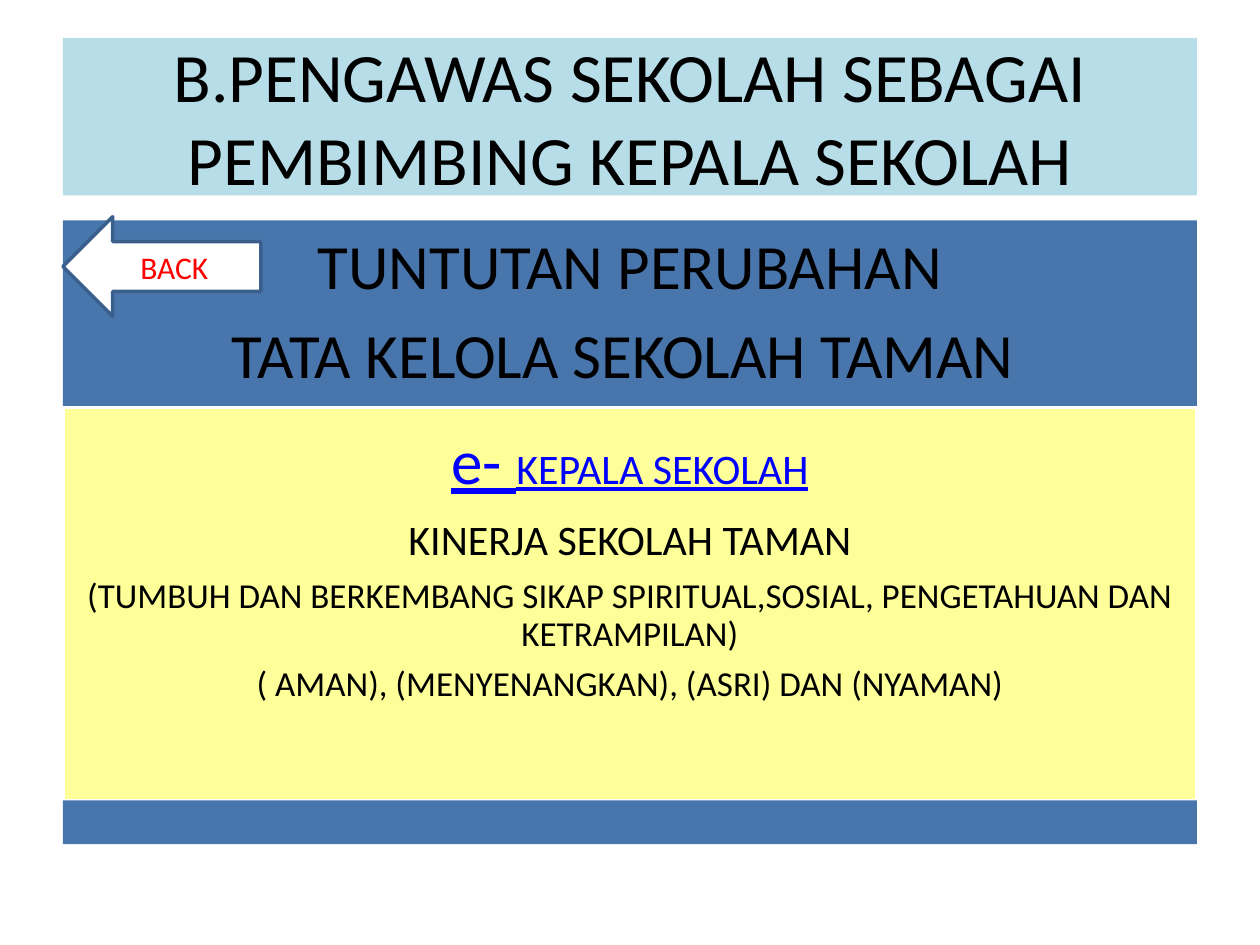
from pptx import Presentation
from pptx.dml.color import RGBColor as Rgb
from pptx.enum.shapes import MSO_SHAPE as Kind
from pptx.enum.text import MSO_ANCHOR as Anchor, PP_ALIGN as Align
from pptx.util import Inches, Pt

HUE = {"sky": "B7DEE8", "blue": "4875AC", "cream": "FFFF99", "white": "FFFFFF",
       "edge": "3A5F8C", "black": "000000", "link": "0000FF", "red": "FF0000"}
COL, ROW = Inches(0.5), Inches(0.05)


def put(item, form):
    """Set each attribute of item from the form dict."""
    for key, val in form.items():
        setattr(item, key, val)


def block(slide, box, fill, line=None, kind=Kind.RECTANGLE):
    """Add a filled shape at box, given in inches."""
    shape = slide.shapes.add_shape(kind, *map(Inches, box))
    shape.shadow.inherit = False
    shape.fill.solid()
    shape.fill.fore_color.rgb = Rgb.from_string(HUE[fill])
    if line:
        shape.line.color.rgb = Rgb.from_string(HUE[line])
        shape.line.width = Pt(2)
    else:
        shape.line.fill.background()
    return shape


def write(shape, paras, inset=None, lead=None, **form):
    """Write paragraphs of (words, size, hue, underline) runs."""
    frame = shape.text_frame
    put(frame, {"word_wrap": True, "vertical_anchor": Anchor.MIDDLE, **form})
    if inset:
        put(frame, {f"margin_{side}": Inches(inset)
                    for side in ("left", "right", "bottom")})
    for num, runs in enumerate(paras):
        para = frame.add_paragraph() if num else frame.paragraphs[0]
        put(para, {"alignment": Align.CENTER})
        if lead:
            put(para, {"line_spacing": lead,
                       "space_after": Pt(round(runs[0][1] / 3))})
        for words, size, hue, under in runs:
            run = para.add_run()
            run.text = words
            put(run.font, {"name": "Calibri", "size": Pt(size), "underline": under})
            run.font.color.rgb = Rgb.from_string(HUE[hue])


def title(slide, box):
    """Place the title band."""
    words = "B.PENGAWAS SEKOLAH SEBAGAI PEMBIMBING KEPALA SEKOLAH"
    write(block(slide, box, "sky"), [[(words, 39.6, "black", False)]])


def body(slide, box):
    """Stack the heading, content and foot bands by share of the box."""
    left, top, wide, high = box
    cuts = [top + high * share for share in (0, 0.3, 0.93, 1)]
    head, main, foot = [
        block(slide, (left, start, wide, end - start), fill, line)
        for start, end, fill, line in zip(
            cuts, cuts[1:], ("blue", "cream", "blue"), (None, "white", None))]
    write(head, [[(words, 36, "black", False)] for words in
                 ("TUNTUTAN PERUBAHAN", "TATA KELOLA SEKOLAH TAMAN ")],
          0.15, 0.9, margin_top=Inches(0.15))
    lines = [("KINERJA SEKOLAH TAMAN", 24),
             ("(TUMBUH DAN BERKEMBANG SIKAP SPIRITUAL,SOSIAL, "
              "PENGETAHUAN DAN KETRAMPILAN)", 20),
             ("( AMAN), (MENYENANGKAN), (ASRI) DAN (NYAMAN)", 20)]
    lead = [("e- ", 36, "link", True), ("KEPALA SEKOLAH", 24, "link", True)]
    write(main, [lead] + [[(words, size, "black", False)] for words, size in lines],
          0.15, 0.9, margin_top=Inches(0.18), vertical_anchor=Anchor.TOP)


def back(slide, box):
    """Place the back arrow."""
    arrow = block(slide, box, "white", "edge", Kind.LEFT_ARROW)
    write(arrow, [[("BACK", 18, "red", False)]])


def grid(col, row, cols, rows):
    """Turn grid columns and rows into a box in inches."""
    return tuple(span.inches for span in (
        Inches(COL.inches * col), Inches(ROW.inches * row),
        Inches(COL.inches * cols), Inches(ROW.inches * rows)))


def main():
    """Build the slide and save it."""
    deck = Presentation()
    put(deck, {"slide_width": COL * 20, "slide_height": ROW * 150})
    slide = deck.slides.add_slide(deck.slide_layouts[6])
    title(slide, grid(1, 6, 18, 25))
    body(slide, grid(1, 35, 18, 99))
    back(slide, grid(1, 34.4, 3.14, 15.8))
    deck.save("out.pptx")


if __name__ == "__main__":
    main()
